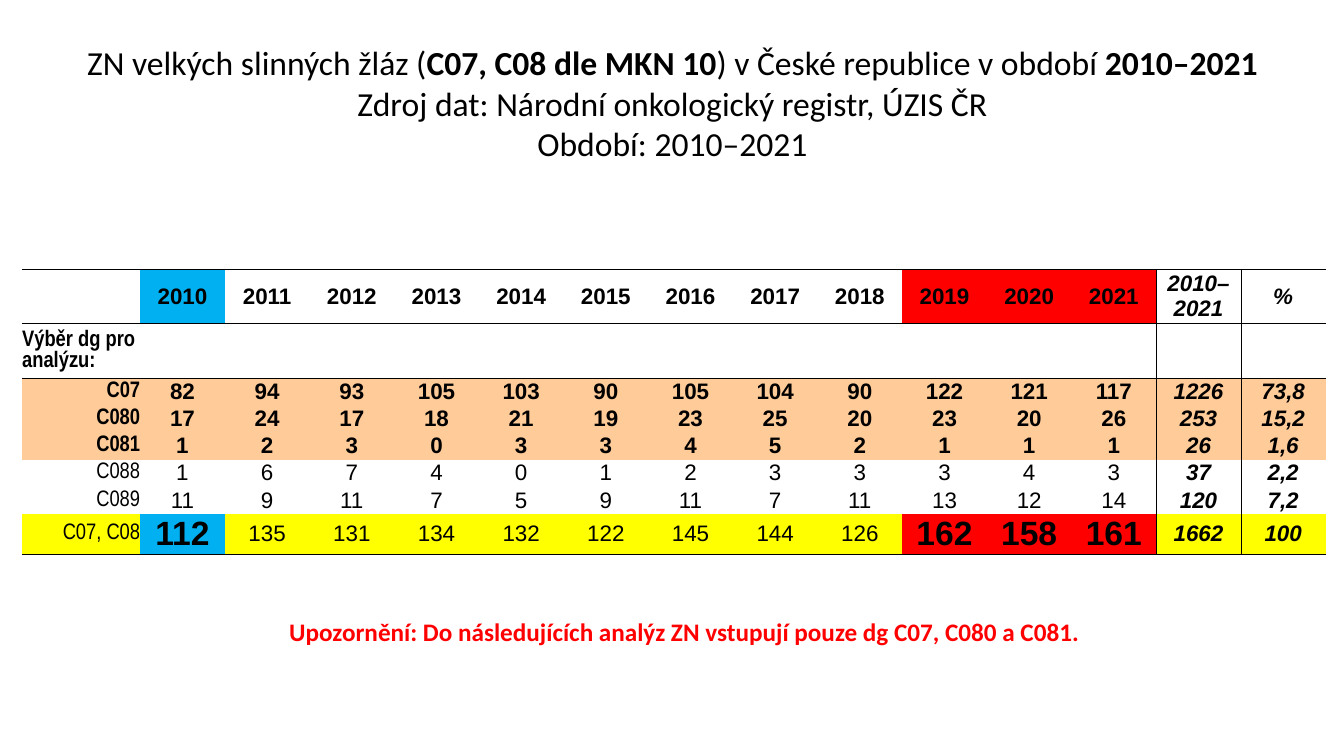
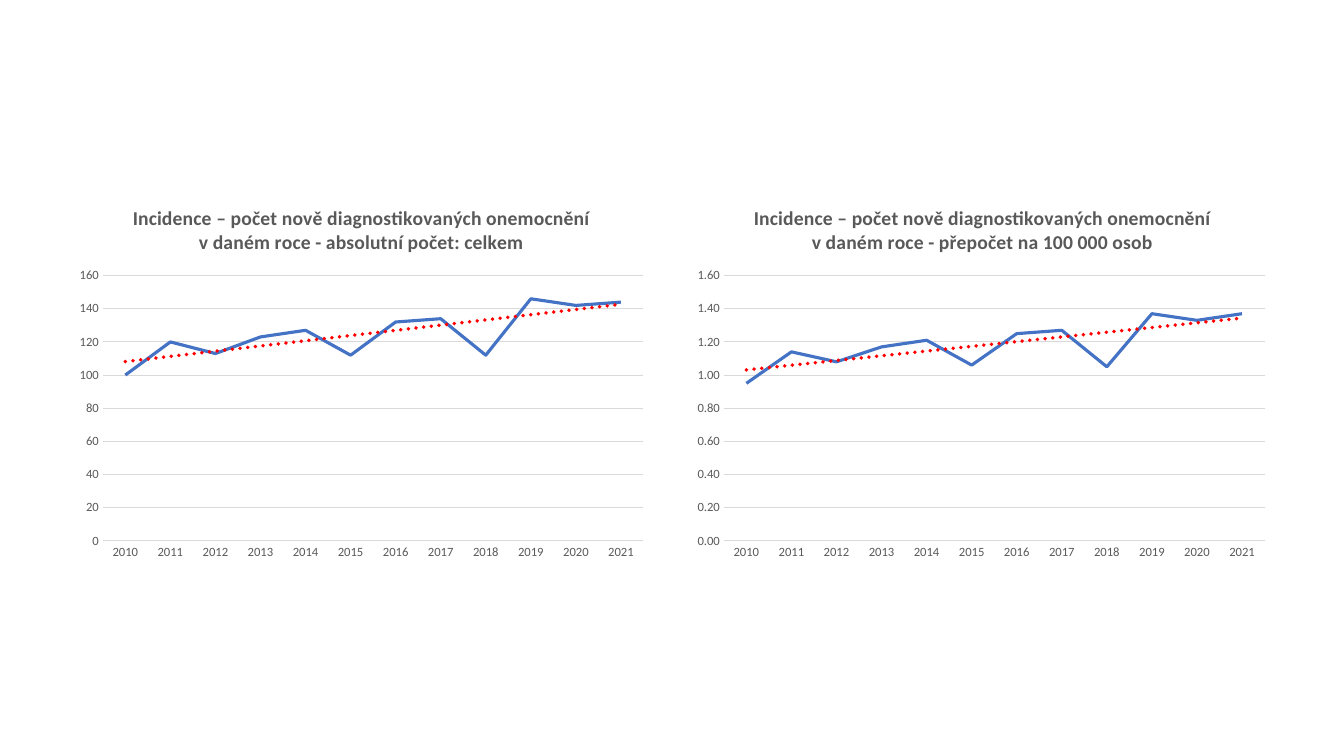
from dataclasses import dataclass

from lxml import etree
from pptx import Presentation
from pptx.chart.data import CategoryChartData
from pptx.dml.color import RGBColor
from pptx.enum.chart import XL_CHART_TYPE as ChartType, XL_MARKER_STYLE as Marker, XL_TICK_MARK as Tick
from pptx.enum.text import MSO_ANCHOR as Anchor, MSO_AUTO_SIZE as AutoSize, PP_ALIGN as Align
from pptx.oxml import parse_xml
from pptx.oxml.ns import nsdecls, qn
from pptx.util import Inches, Pt

BLACK, RED, BLUE, YELLOW, PEACH = "000000", "FF0000", "00B0F0", "FFFF00", "FFCC99"
GREY_TEXT, GREY_LINE, SERIES_BLUE = "595959", "D9D9D9", "4472C4"
BODY_FONT, TABLE_FONT, LABEL_FONT = "Calibri", "Arial", "Arial Narrow"
NO_STYLE = "{2D5ABB26-0587-4C30-8999-92F81FD0307C}"
TITLE_ONLY, BLANK = 5, 6

YEARS = [str(year) for year in range(2010, 2022)]
TITLE_LINES = [
    [("ZN velkých slinných žláz (", False), ("C07, C08 dle MKN 10", True),
     (") v České republice v období ", False), ("2010–2021", True)],
    [("Zdroj dat: Národní onkologický registr, ÚZIS ČR", False)],
    [("Období: 2010–2021", False)],
]
WARNING = "Upozornění: Do následujících analýz ZN vstupují pouze dg C07, C080 a C081."


@dataclass(frozen=True)
class TableRow:
    height: float
    cells: list[str]
    fill: str | None = None
    bold: bool = False
    highlighted: bool = False
    highlight_size: int = 16
    rules: str = ""  # T = line above, B = line below
    divided: bool = True


@dataclass(frozen=True)
class Trend:
    left: float
    title: list[str]
    values: list[float]
    maximum: float
    step: float
    number_format: str


COLUMNS = 15
FIRST_TOTAL = 13
HIGHLIGHTS = {1: BLUE, 10: RED, 11: RED, 12: RED}
NO_CELLS = [""] * (COLUMNS - 1)
ROWS = [
    TableRow(0.54, ["", *YEARS, "2010–2021", "%"], bold=True, highlighted=True, rules="TB"),
    TableRow(0.54, ["Výběr dg pro analýzu:", *NO_CELLS], bold=True, rules="T"),
    TableRow(0.27, "C07 82 94 93 105 103 90 105 104 90 122 121 117 1226 73,8".split(), PEACH, True),
    TableRow(0.27, "C080 17 24 17 18 21 19 23 25 20 23 20 26 253 15,2".split(), PEACH, True),
    TableRow(0.27, "C081 1 2 3 0 3 3 4 5 2 1 1 1 26 1,6".split(), PEACH, True),
    TableRow(0.27, "C088 1 6 7 4 0 1 2 3 3 3 4 3 37 2,2".split()),
    TableRow(0.27, "C089 11 9 11 7 5 9 11 7 11 13 12 14 120 7,2".split()),
    TableRow(0.4, ["C07, C08", *"112 135 131 134 132 122 145 144 126 162 158 161 1662 100".split()],
             YELLOW, highlighted=True, highlight_size=24, rules="B"),
    TableRow(0.24, ["", *NO_CELLS], rules="T", divided=False),
]

CHART_HEADING = "Incidence – počet nově diagnostikovaných onemocnění"
TRENDS = [
    Trend(0.67, [CHART_HEADING, "v daném roce - absolutní počet: celkem"],
          [100, 120, 113, 123, 127, 112, 132, 134, 112, 146, 142, 144], 160, 20, "General"),
    Trend(6.83, [CHART_HEADING, "v daném roce - přepočet na 100 000 osob"],
          [0.95, 1.14, 1.08, 1.17, 1.21, 1.06, 1.25, 1.27, 1.05, 1.37, 1.33, 1.37], 1.6, 0.2, "0.00"),
]


def rgb(value: str) -> RGBColor:
    return RGBColor.from_string(value)


def set_font(font, size: float, color: str, name: str = BODY_FONT,
             bold: bool = False, italic: bool = False) -> None:
    font.name, font.size, font.bold, font.italic = name, Pt(size), bold, italic
    font.color.rgb = rgb(color)


def add_title(slide) -> None:
    box = slide.shapes.title
    box.left, box.top, box.width, box.height = map(Inches, (0.31, 0.37, 12.72, 1.31))
    frame = box.text_frame
    frame.word_wrap, frame.auto_size, frame.vertical_anchor = True, AutoSize.NONE, Anchor.TOP
    for index, line in enumerate(TITLE_LINES):
        para = frame.add_paragraph() if index else frame.paragraphs[0]
        para.alignment = Align.CENTER
        set_font(para.font, 24, BLACK)
        for text, bold in line:
            span = para.add_run()
            span.text, span.font.bold = text, bold


def add_warning(slide) -> None:
    box = slide.shapes.add_textbox(Inches(2.77), Inches(6.07), Inches(8.07), Inches(0.4))
    box.text_frame.word_wrap = True
    para = box.text_frame.paragraphs[0]
    para.text = WARNING
    set_font(para.font, 18, RED, bold=True)


def add_borders(cell, sides: str) -> None:
    properties = cell._tc.get_or_add_tcPr()
    for side in "LRTB":
        if side in sides:
            properties.append(parse_xml(
                f'<a:ln{side} {nsdecls("a")} w="{Pt(0.5)}"><a:solidFill>'
                f'<a:srgbClr val="{BLACK}"/></a:solidFill></a:ln{side}>'))


def format_cell(cell, row: TableRow, column: int) -> None:
    highlight = HIGHLIGHTS.get(column) if row.highlighted else None
    is_total = column >= FIRST_TOTAL
    large = highlight is not None and row.highlight_size > 16

    # Borders come before the fill in the cell properties
    divider = {FIRST_TOTAL - 1: "R", FIRST_TOTAL: "L"}.get(column, "") if row.divided else ""
    add_borders(cell, row.rules + divider)
    fill = highlight or row.fill
    if fill:
        cell.fill.solid()
        cell.fill.fore_color.rgb = rgb(fill)
    else:
        cell.fill.background()

    cell.margin_left = cell.margin_right = cell.margin_top = cell.margin_bottom = 0
    cell.vertical_anchor = Anchor.MIDDLE
    para = cell.text_frame.paragraphs[0]
    para.text = row.cells[column]
    if column:
        para.alignment = Align.CENTER
    else:
        para.alignment = Align.LEFT if " pro " in para.text else Align.RIGHT
    set_font(para.font, row.highlight_size if highlight else 16, BLACK,
             TABLE_FONT if column else LABEL_FONT, row.bold or is_total or large, is_total)


def add_case_table(slide) -> None:
    frame = slide.shapes.add_table(len(ROWS), COLUMNS, Inches(0.22), Inches(2.67),
                                   Inches(12.94), Inches(sum(row.height for row in ROWS)))
    for style in frame.element.iter(qn("a:tableStyleId")):
        style.text = NO_STYLE
    table = frame.table
    table.first_row = table.horz_banding = False
    for index, column in enumerate(table.columns):
        column.width = Inches(0.84 if index else 1.17)
    for index, row in enumerate(ROWS):
        table.rows[index].height = Inches(row.height)
        for column in range(COLUMNS):
            format_cell(table.cell(index, column), row, column)
    last = len(ROWS) - 1
    table.cell(last, 0).merge(table.cell(last, 2))


def set_plot_layout(chart) -> None:
    area = next(chart.element.iter(qn("c:plotArea")))
    for layout in area.findall(qn("c:layout")):
        area.remove(layout)
    layout = parse_xml(f'<c:layout {nsdecls("c")}><c:manualLayout/></c:layout>')
    settings = {"layoutTarget": "inner", "xMode": "edge", "yMode": "edge",
                "x": "0.06", "y": "0.23", "w": "0.92", "h": "0.7"}
    for tag, value in settings.items():
        etree.SubElement(layout[0], qn(f"c:{tag}")).set("val", value)
    area.insert(0, layout)


def add_trendline(chart) -> None:
    categories = next(chart.element.iter(qn("c:cat")))
    categories.addprevious(parse_xml(
        f'<c:trendline {nsdecls("c", "a")}><c:spPr><a:ln w="{Pt(2.75)}" cap="rnd"><a:solidFill>'
        f'<a:srgbClr val="{RED}"/></a:solidFill><a:prstDash val="sysDot"/></a:ln></c:spPr>'
        '<c:trendlineType val="linear"/><c:dispRSqr val="0"/><c:dispEq val="0"/></c:trendline>'))


def style_line(line, color: str, width: float) -> None:
    line.color.rgb = rgb(color)
    line.width = Pt(width)


def add_trend_chart(slide, trend: Trend) -> None:
    data = CategoryChartData(number_format=trend.number_format)
    data.categories = YEARS
    data.add_series("Series 1", trend.values)
    chart = slide.shapes.add_chart(ChartType.LINE, Inches(trend.left), Inches(1.87),
                                   Inches(5.83), Inches(3.76), data).chart
    chart.has_legend = False
    set_font(chart.font, 10, BLACK)

    # Title
    chart.has_title = True
    frame = chart.chart_title.text_frame
    for index, text in enumerate(trend.title):
        para = frame.add_paragraph() if index else frame.paragraphs[0]
        para.text = text
        set_font(para.font, 14, GREY_TEXT, bold=True)

    # Axes
    for axis in (chart.category_axis, chart.value_axis):
        axis.major_tick_mark = axis.minor_tick_mark = Tick.NONE
        set_font(axis.tick_labels.font, 9, GREY_TEXT)
    style_line(chart.category_axis.format.line, GREY_LINE, 0.75)
    values = chart.value_axis
    values.minimum_scale, values.maximum_scale, values.major_unit = 0, trend.maximum, trend.step
    values.tick_labels.number_format = trend.number_format
    values.tick_labels.number_format_is_linked = False
    values.format.line.fill.background()
    values.has_major_gridlines = True
    style_line(values.major_gridlines.format.line, GREY_LINE, 0.75)

    # Series and its trend
    plot = chart.plots[0]
    plot.vary_by_categories = False
    series = plot.series[0]
    series.smooth = False
    series.marker.style = Marker.NONE
    style_line(series.format.line, SERIES_BLUE, 2.25)
    add_trendline(chart)
    set_plot_layout(chart)


def main() -> None:
    deck = Presentation()
    deck.slide_width, deck.slide_height = Inches(13.33), Inches(7.5)

    # Case counts by diagnosis
    page = deck.slides.add_slide(deck.slide_layouts[TITLE_ONLY])
    add_title(page)
    add_case_table(page)
    add_warning(page)

    # Incidence charts
    page = deck.slides.add_slide(deck.slide_layouts[BLANK])
    for trend in TRENDS:
        add_trend_chart(page, trend)

    deck.save("out.pptx")


if __name__ == "__main__":
    main()
